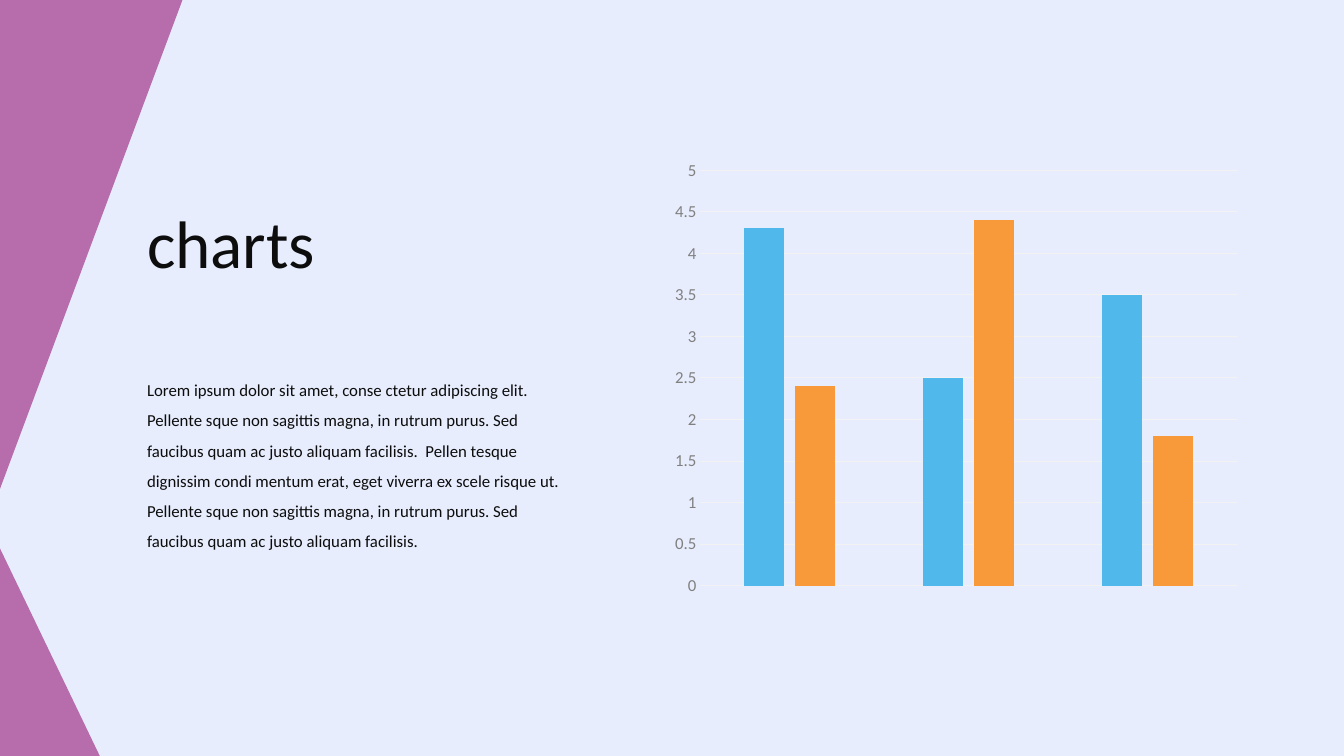
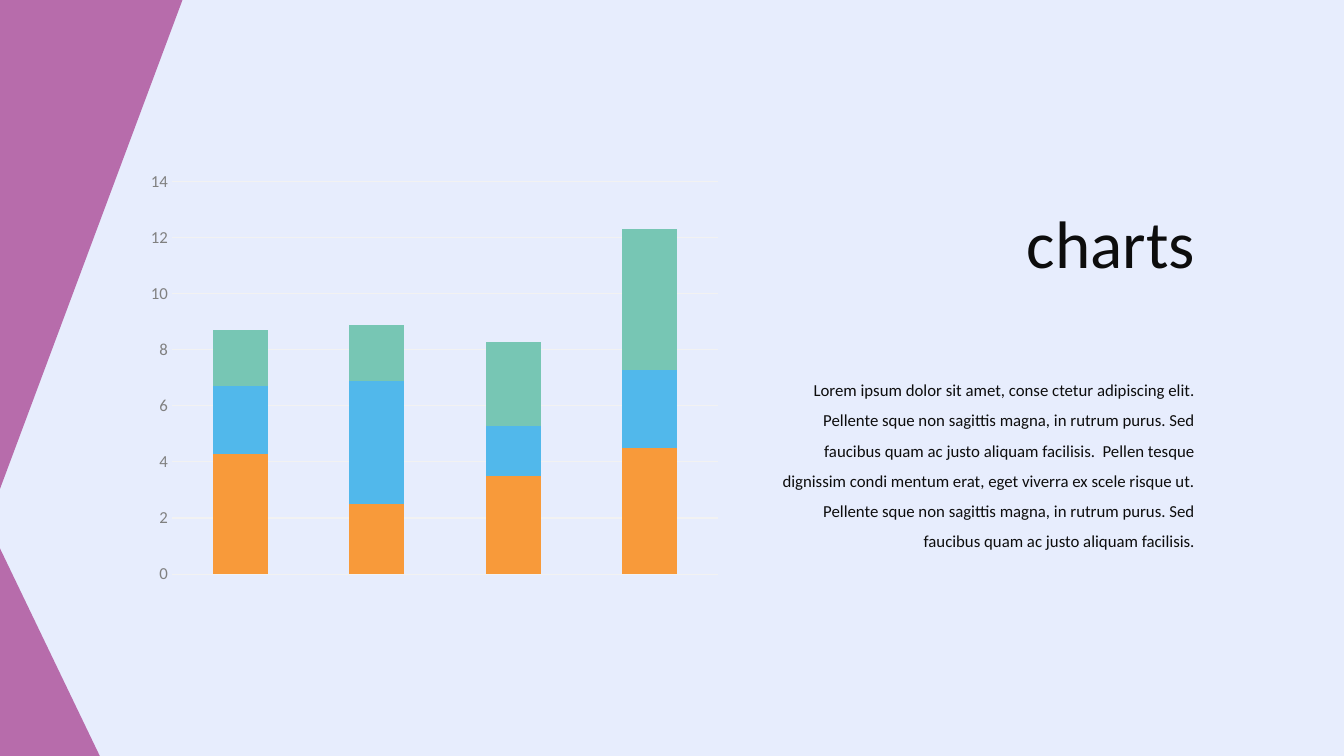
import pptx
import pptx.chart.data
import pptx.dml.color
import pptx.enum.chart
import pptx.enum.shapes
import pptx.enum.text
import pptx.util

Inches = pptx.util.Inches
Pt = pptx.util.Pt
RGBColor = pptx.dml.color.RGBColor
ChartType = pptx.enum.chart.XL_CHART_TYPE
TickMark = pptx.enum.chart.XL_TICK_MARK
Align = pptx.enum.text.PP_ALIGN

# Shared look
FONT = "Calibri"
BACKGROUND = RGBColor(0xE7, 0xED, 0xFD)
PURPLE = RGBColor(0xB7, 0x6C, 0xAB)
INK = RGBColor(0x0D, 0x0D, 0x0D)
BLACK = RGBColor(0x00, 0x00, 0x00)
GRAY = RGBColor(0x80, 0x80, 0x80)
GRID = RGBColor(0xF2, 0xF2, 0xF2)
BLUE = RGBColor(0x51, 0xB8, 0xEB)
ORANGE = RGBColor(0xF8, 0x9A, 0x3A)
GREEN = RGBColor(0x77, 0xC6, 0xB4)

TITLE_FONT = {"name": FONT, "size": Pt(48), "color": INK}
BODY_FONT = {"name": FONT, "size": Pt(12), "color": INK}
CHART_FONT = {"name": FONT, "size": Pt(10), "color": BLACK}
AXIS_FONT = {"name": FONT, "size": Pt(12), "color": GRAY}

LEFT_EDGE, RIGHT_EDGE = 1.36, 11.95
BODY_TEXT = (
    "Lorem ipsum dolor sit amet, conse ctetur adipiscing elit. "
    "Pellente sque non sagittis magna, in rutrum purus. "
    "Sed faucibus quam ac justo aliquam facilisis.  "
    "Pellen tesque dignissim condi mentum erat, eget viverra ex scele risque ut. "
    "Pellente sque non sagittis magna, in rutrum purus. "
    "Sed faucibus quam ac justo aliquam facilisis."
)


def set_values(target, values):
    for name, value in values.items():
        setattr(target, name, value)


def set_font(font, values):
    for name, value in values.items():
        if name == "color":
            font.color.rgb = value
        else:
            setattr(font, name, value)


def add_wedge(slide, top, width, height, flipped=False):
    """Draw a right triangle along the left edge of the slide."""
    shape = slide.shapes.add_shape(
        pptx.enum.shapes.MSO_SHAPE.RIGHT_TRIANGLE,
        Inches(0), Inches(top), Inches(width), Inches(height))
    shape.shadow.inherit = False
    shape.fill.solid()
    shape.fill.fore_color.rgb = PURPLE
    shape.line.fill.background()
    if flipped:
        shape._element.spPr.get_or_add_xfrm().set("flipV", "1")


def add_chart_slide(presentation):
    slide = presentation.slides.add_slide(presentation.slide_layouts[6])
    add_wedge(slide, 5.44, 1, 2.08)
    add_wedge(slide, 0, 1.81, 4.85, flipped=True)
    return slide


def add_text(slide, text, top, width, height, font, alignment, line_spacing):
    left = RIGHT_EDGE - width if alignment == Align.RIGHT else LEFT_EDGE
    box = slide.shapes.add_textbox(
        Inches(left), Inches(top), Inches(width), Inches(height))
    set_values(box.text_frame, {
        "word_wrap": True,
        "auto_size": pptx.enum.text.MSO_AUTO_SIZE.SHAPE_TO_FIT_TEXT,
    })
    paragraph = box.text_frame.paragraphs[0]
    set_values(paragraph, {"alignment": alignment, "line_spacing": line_spacing})
    run = paragraph.add_run()
    run.text = text
    set_font(run.font, font)


def add_story(slide, alignment):
    """Add the title and the body text below it."""
    add_text(slide, "charts", 1.95, 3.29, 0.91, TITLE_FONT, alignment, 1.0)
    add_text(slide, BODY_TEXT, 3.62, 4.42, 1.89, BODY_FONT, alignment, 1.5)


def add_columns(slide, chart_type, box, series, gap, overlap, maximum, step):
    """Add a column chart; series is a list of (color, values)."""
    data = pptx.chart.data.CategoryChartData()
    data.categories = [str(i + 1) for i in range(len(series[0][1]))]
    for number, (_, values) in enumerate(series, 1):
        data.add_series(f"Series {number}", values)
    chart = slide.shapes.add_chart(
        chart_type, *(Inches(length) for length in box), data).chart
    set_values(chart, {"has_legend": False, "has_title": False})
    set_font(chart.font, CHART_FONT)

    # Columns
    plot = chart.plots[0]
    set_values(plot, {
        "vary_by_categories": False, "gap_width": gap, "overlap": overlap})
    for column, (color, _) in zip(plot.series, series):
        column.format.fill.solid()
        column.format.fill.fore_color.rgb = color

    # Axes
    chart.category_axis.visible = False
    axis = chart.value_axis
    set_values(axis, {
        "minimum_scale": 0, "maximum_scale": maximum, "major_unit": step,
        "major_tick_mark": TickMark.NONE, "minor_tick_mark": TickMark.NONE,
        "has_major_gridlines": True,
    })
    set_font(axis.tick_labels.font, AXIS_FONT)
    axis.format.line.fill.background()
    grid_line = axis.major_gridlines.format.line
    grid_line.color.rgb = GRID
    grid_line.width = Pt(0.75)


def build_clustered(presentation):
    slide = add_chart_slide(presentation)
    add_story(slide, Align.LEFT)
    add_columns(
        slide, ChartType.COLUMN_CLUSTERED, (6.58, 1.5, 5.8, 4.5),
        [(BLUE, (4.3, 2.5, 3.5)), (ORANGE, (2.4, 4.4, 1.8))],
        gap=219, overlap=-27, maximum=5, step=0.5)


def build_stacked(presentation):
    slide = add_chart_slide(presentation)
    add_columns(
        slide, ChartType.COLUMN_STACKED, (1.38, 1.62, 5.86, 4.26),
        [(ORANGE, (4.3, 2.5, 3.5, 4.5)),
         (BLUE, (2.4, 4.4, 1.8, 2.8)),
         (GREEN, (2, 2, 3, 5))],
        gap=150, overlap=100, maximum=14, step=2)
    add_story(slide, Align.RIGHT)


def main():
    presentation = pptx.Presentation()
    set_values(presentation, {
        "slide_width": Inches(13.33), "slide_height": Inches(7.5)})
    background = presentation.slide_master.background.fill
    background.solid()
    background.fore_color.rgb = BACKGROUND
    build_clustered(presentation)
    build_stacked(presentation)
    presentation.save("out.pptx")


if __name__ == "__main__":
    main()
